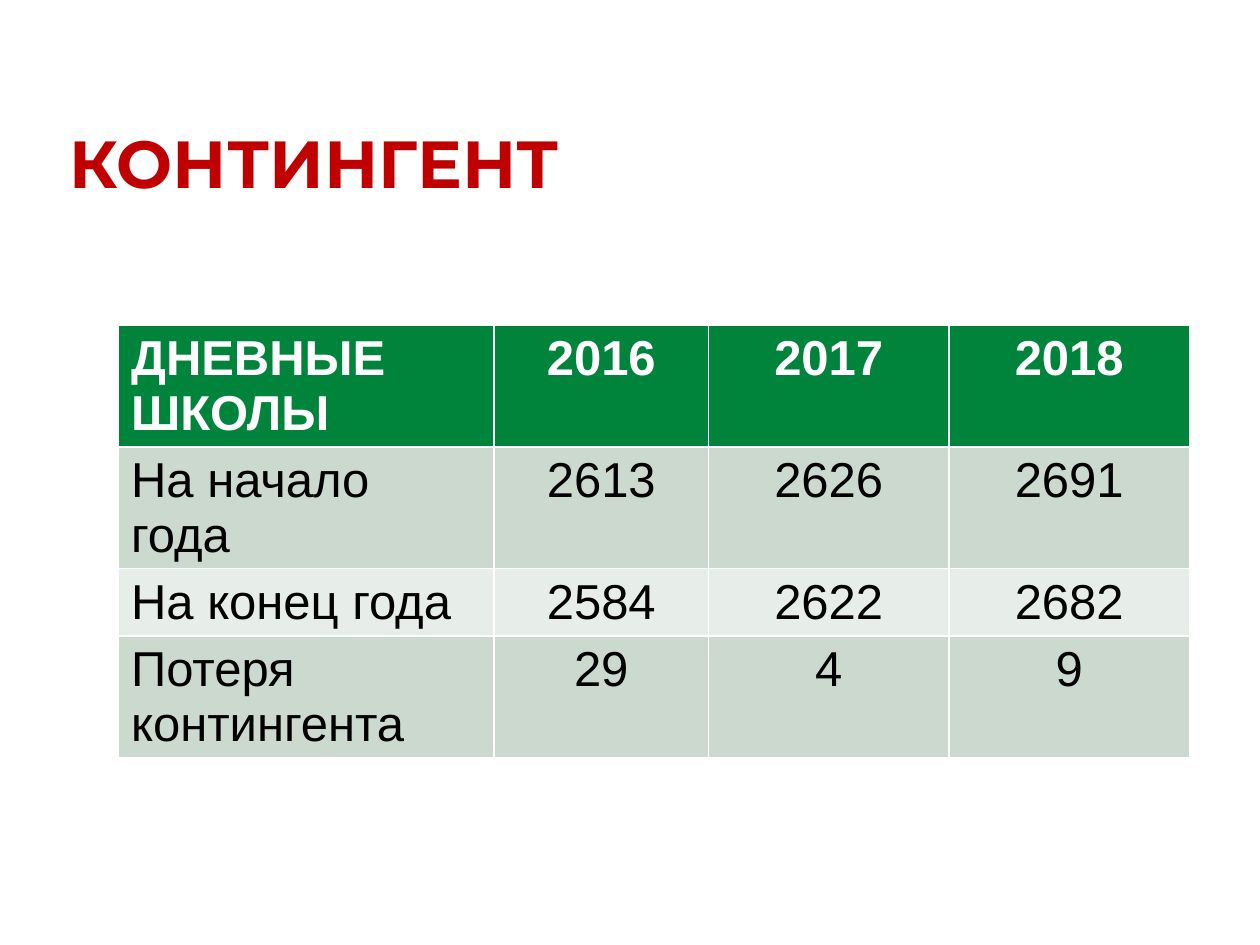
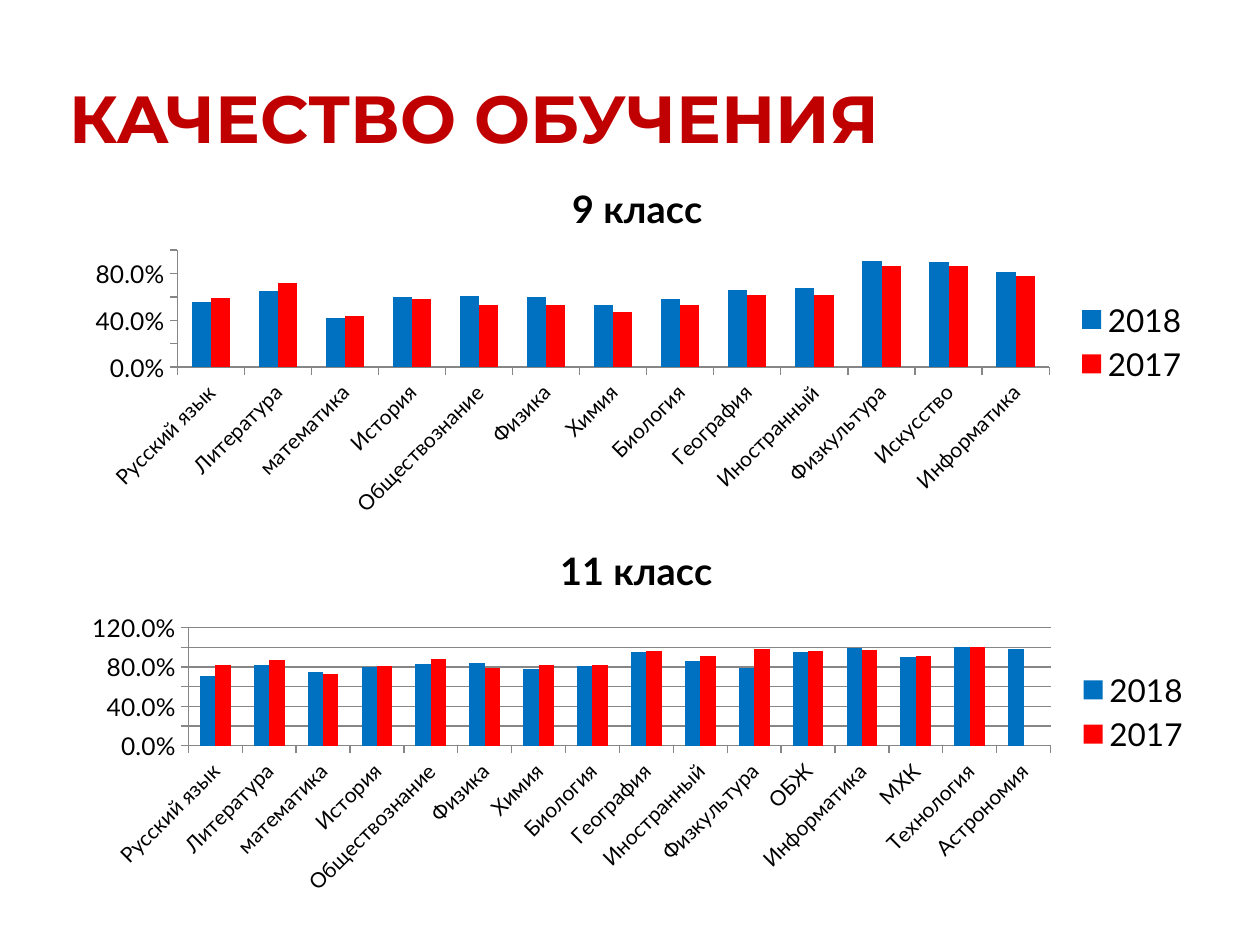
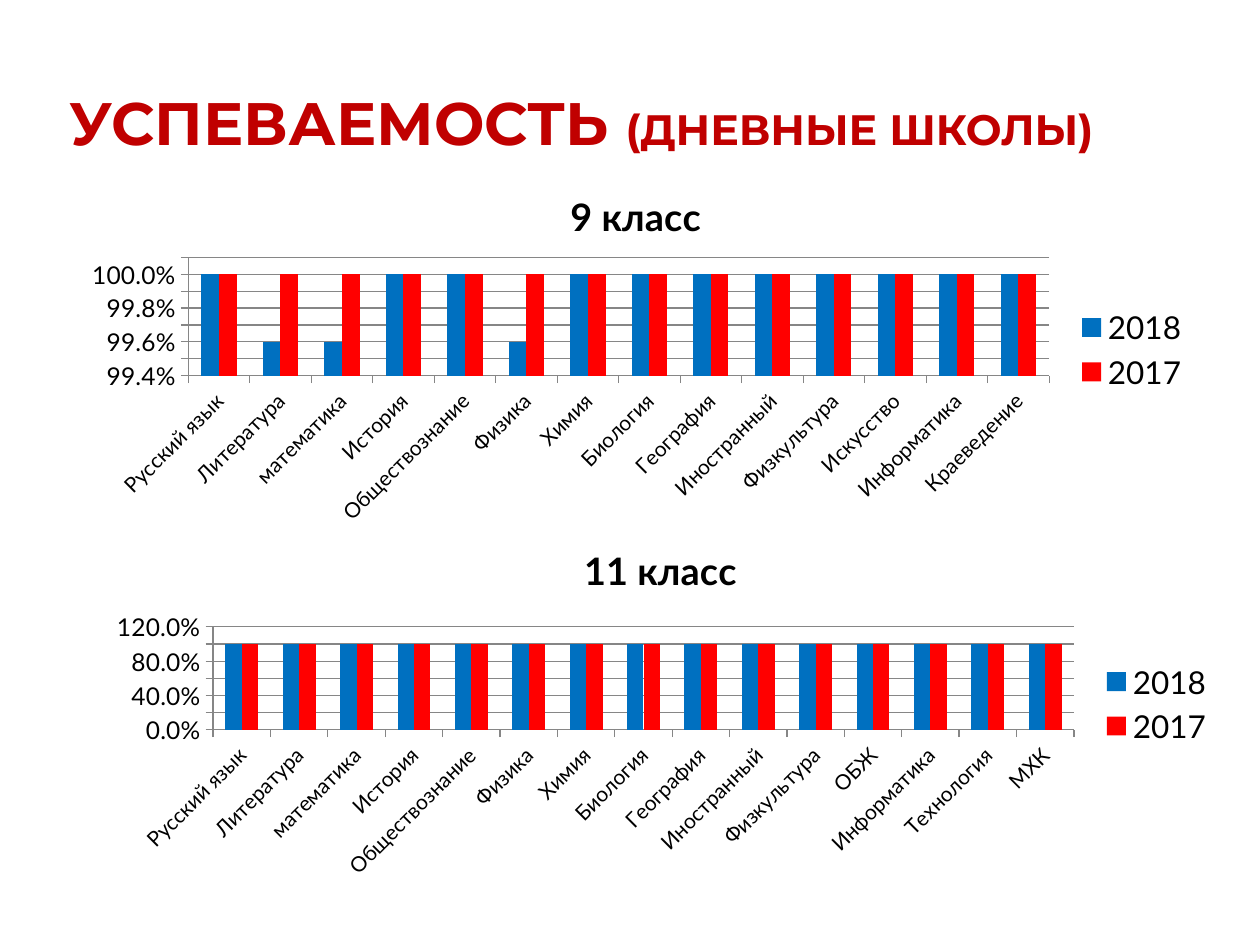
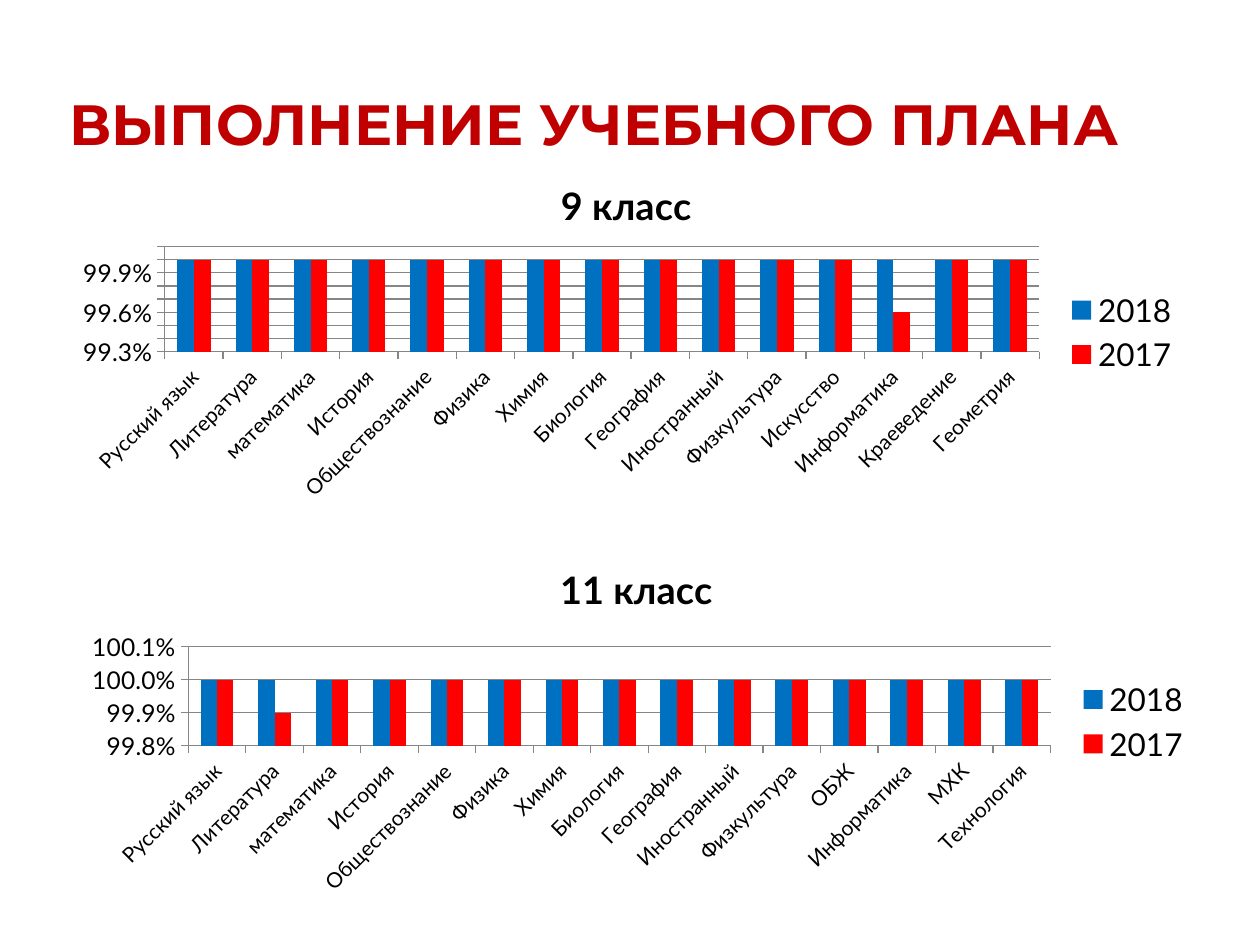
from pptx import Presentation
from pptx.chart.data import CategoryChartData
from pptx.dml.color import RGBColor
from pptx.enum.chart import XL_CHART_TYPE, XL_LEGEND_POSITION, XL_TICK_MARK
from pptx.enum.text import MSO_ANCHOR, MSO_AUTO_SIZE, PP_ALIGN
from pptx.util import Cm, Pt

COLUMNS = XL_CHART_TYPE.COLUMN_CLUSTERED
LEGEND_RIGHT = XL_LEGEND_POSITION.RIGHT
TICK_OUTSIDE = XL_TICK_MARK.OUTSIDE
BOTTOM = MSO_ANCHOR.BOTTOM
NO_AUTOFIT = MSO_AUTO_SIZE.NONE
LEFT, CENTER = PP_ALIGN.LEFT, PP_ALIGN.CENTER

COLORS = {
    "title": "C00000",
    "header": "00843C",
    "band_dark": "CCD9CE",
    "band_light": "E7EDE8",
    "white": "FFFFFF",
    "text": "000000",
    "axis": "868686",
    "2018": "0070C0",
    "2017": "FF0000",
}
TITLE_FONT, TABLE_FONT, CHART_FONT = "Montserrat", "Arial", "Lato"
TITLE_BOX = (1.27, 0.76, 22.86, 2.41)

SUBJECTS = ["Русский язык", "Литература", "математика", "История",
            "Обществознание", "Физика", "Химия", "Биология", "География",
            "Иностранный", "Физкультура"]
GRADE_9 = SUBJECTS + ["Искусство", "Информатика"]
GRADE_11 = SUBJECTS + ["ОБЖ", "Информатика"]

ENROLMENT = [
    ["ДНЕВНЫЕ ШКОЛЫ", "2016", "2017", "2018"],
    ["На начало года", "2613", "2626", "2691"],
    ["На конец года", "2584", "2622", "2682"],
    ["Потеря контингента", "29", "4", "9"],
]


def full_marks(subjects, **exceptions):
    return [exceptions.get(subject, 1) for subject in subjects]


class Deck:
    def __init__(self):
        self.presentation = Presentation()
        self.presentation.slide_width = Cm(25.4)
        self.presentation.slide_height = Cm(19.05)
        self.slide = None

    def color(self, name):
        return RGBColor.from_string(COLORS[name])

    def style_font(self, font, name, size, color, bold=False):
        font.name = name
        font.size = Pt(size)
        font.bold = bold
        font.color.rgb = self.color(color)

    def add_slide(self, *title_parts, box=TITLE_BOX):
        layout = self.presentation.slide_layouts[5]
        self.slide = self.presentation.slides.add_slide(layout)
        title = self.slide.shapes.title
        title.left, title.top, title.width, title.height = map(Cm, box)
        frame = title.text_frame
        frame.word_wrap = True
        frame.auto_size = NO_AUTOFIT
        frame.vertical_anchor = BOTTOM
        frame.margin_left = frame.margin_right = Cm(0.13)
        frame.margin_top = frame.margin_bottom = 0
        paragraph = frame.paragraphs[0]
        paragraph.alignment = LEFT
        for text, size in title_parts:
            run = paragraph.add_run()
            run.text = text
            self.style_font(run.font, TITLE_FONT, size, "title", True)

    def add_table(self, rows, left, top, widths, row_height):
        table = self.slide.shapes.add_table(
            len(rows), len(widths), Cm(left), Cm(top),
            Cm(sum(widths)), Cm(row_height * len(rows))).table
        for column, width in zip(table.columns, widths):
            column.width = Cm(width)
        for row_index, row in enumerate(rows):
            table.rows[row_index].height = Cm(row_height)
            header = row_index == 0
            band = "band_dark" if row_index % 2 else "band_light"
            for column_index, text in enumerate(row):
                cell = table.cell(row_index, column_index)
                cell.fill.solid()
                cell.fill.fore_color.rgb = self.color("header" if header else band)
                cell.text = text
                paragraph = cell.text_frame.paragraphs[0]
                paragraph.alignment = CENTER if column_index else LEFT
                self.style_font(paragraph.runs[0].font, TABLE_FONT, 28,
                                "white" if header else "text", header)

    def add_chart(self, title, box, subjects, values_2018, values_2017,
                  scale, gridlines=True):
        data = CategoryChartData(number_format="0.0%")
        data.categories = subjects
        data.add_series("2018", values_2018)
        data.add_series("2017", values_2017)
        chart = self.slide.shapes.add_chart(COLUMNS, *map(Cm, box), data).chart
        self.style_font(chart.font, CHART_FONT, 18, "text")

        chart.has_title = True
        heading = chart.chart_title.text_frame
        heading.text = title
        self.style_font(heading.paragraphs[0].runs[0].font,
                        CHART_FONT, 21.6, "text", True)
        chart.has_legend = True
        chart.legend.position = LEGEND_RIGHT
        chart.legend.include_in_layout = False

        plot = chart.plots[0]
        plot.gap_width = 150
        plot.overlap = 0
        plot.vary_by_categories = False
        for series in plot.series:
            series.format.fill.solid()
            series.format.fill.fore_color.rgb = self.color(series.name)
        self.style_axes(chart, scale, gridlines)

    def style_axes(self, chart, scale, gridlines):
        value_axis = chart.value_axis
        value_axis.minimum_scale, value_axis.maximum_scale, value_axis.major_unit = scale
        value_axis.has_major_gridlines = gridlines
        value_axis.tick_labels.number_format = "0.0%"
        value_axis.tick_labels.number_format_is_linked = False
        lines = [value_axis.format.line, chart.category_axis.format.line]
        if gridlines:
            lines.append(value_axis.major_gridlines.format.line)
        for line in lines:
            line.color.rgb = self.color("axis")
            line.width = Pt(0.75)
        for axis, size in ((chart.category_axis, 12), (value_axis, 14)):
            axis.major_tick_mark = TICK_OUTSIDE
            self.style_font(axis.tick_labels.font, CHART_FONT, size, "text")
        for body in chart.element.xpath(".//c:catAx/c:txPr/a:bodyPr"):
            body.set("rot", "-2700000")
            body.set("vert", "horz")


def main():
    deck = Deck()

    deck.add_slide(("КОНТИНГЕНТ", 38), box=(1.27, 0.89, 20.12, 3.17))
    deck.add_table(ENROLMENT, 2.39, 6.55, [7.57, 4.32, 4.85, 4.85], 1.04)

    percent_scale = (0, 1.2, 0.2)
    deck.add_slide(("КАЧЕСТВО ОБУЧЕНИЯ", 38))
    deck.add_chart(
        "9 класс", (1.47, 3.23, 22.76, 7.32), GRADE_9,
        [0.56, 0.65, 0.42, 0.6, 0.61, 0.6, 0.53, 0.58, 0.66, 0.68, 0.91, 0.9, 0.81],
        [0.59, 0.72, 0.44, 0.58, 0.53, 0.53, 0.47, 0.53, 0.62, 0.62, 0.86, 0.86, 0.78],
        (0, 1, 0.2), gridlines=False)
    deck.add_chart(
        "11 класс", (1.4, 10.52, 22.86, 7.67),
        GRADE_11 + ["МХК", "Технология", "Астрономия"],
        [0.71, 0.82, 0.75, 0.8, 0.83, 0.84, 0.78, 0.81, 0.95, 0.86, 0.79, 0.95,
         0.99, 0.9, 1, 0.98],
        [0.82, 0.87, 0.73, 0.81, 0.88, 0.79, 0.82, 0.82, 0.96, 0.91, 0.98, 0.96,
         0.97, 0.91, 1, None],
        percent_scale)

    deck.add_slide(("УСПЕВАЕМОСТЬ ", 34.2), ("(ДНЕВНЫЕ ШКОЛЫ)", 24.3))
    subjects = GRADE_9 + ["Краеведение"]
    deck.add_chart(
        "9 класс", (1.4, 3.38, 22.83, 7.34), subjects,
        full_marks(subjects, Литература=0.996, математика=0.996, Физика=0.996),
        full_marks(subjects), (0.994, 1.001, 0.001))
    subjects = GRADE_11 + ["Технология", "МХК"]
    deck.add_chart(
        "11 класс", (1.9, 10.52, 22.83, 7.34), subjects,
        full_marks(subjects), full_marks(subjects), percent_scale)

    deck.add_slide(("ВЫПОЛНЕНИЕ УЧЕБНОГО ПЛАНА", 32.4))
    subjects = GRADE_9 + ["Краеведение", "Геометрия"]
    deck.add_chart(
        "9 класс", (1.22, 3.17, 22.81, 7.06), subjects,
        full_marks(subjects), full_marks(subjects, Информатика=0.996),
        (0.993, 1.001, 0.001))
    subjects = GRADE_11 + ["МХК", "Технология"]
    deck.add_chart(
        "11 класс", (1.4, 10.92, 22.86, 7.26), subjects,
        full_marks(subjects), full_marks(subjects, Литература=0.999),
        (0.998, 1.001, 0.001))

    deck.presentation.save("out.pptx")


if __name__ == "__main__":
    main()
